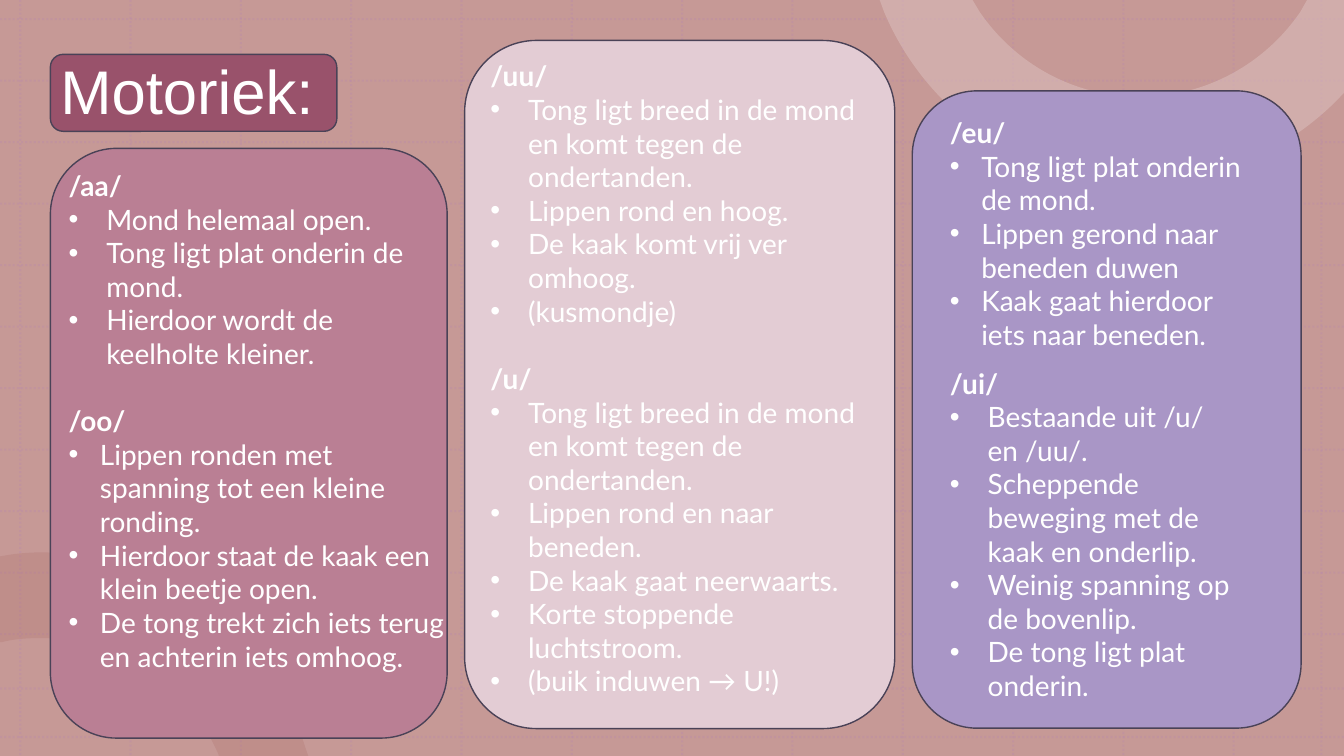
from lxml import etree
from pptx import Presentation
from pptx.dml.color import RGBColor
from pptx.enum import dml, shapes, text
from pptx.oxml.ns import qn
from pptx.util import Cm, Pt

# Content
TITLE = "Motoriek:"
WIDE, NARROW = 0.95, 0.79  # bullet indents in cm
AA = ("/aa/", WIDE, [
    "Mond helemaal open.",
    "Tong ligt plat onderin de mond.",
    "Hierdoor wordt de keelholte kleiner."])
OO = ("/oo/", NARROW, [
    "Lippen ronden met spanning tot een kleine ronding.",
    "Hierdoor staat de kaak een klein beetje open.",
    "De tong trekt zich iets terug en achterin iets omhoog."])
UU = ("/uu/", WIDE, [
    "Tong ligt breed in de mond en komt tegen de ondertanden.",
    "Lippen rond en hoog.",
    "De kaak komt vrij ver omhoog.",
    "(kusmondje)"])
U = ("/u/", WIDE, [
    "Tong ligt breed in de mond en komt tegen de ondertanden.",
    "Lippen rond en naar beneden.",
    "De kaak gaat neerwaarts.",
    "Korte stoppende luchtstroom.",
    "(buik induwen → U!)"])
EU = ("/eu/", NARROW, [
    "Tong ligt plat onderin de mond.",
    "Lippen gerond naar beneden duwen",
    "Kaak gaat hierdoor iets naar beneden."])
UI = ("/ui/", WIDE, [
    "Bestaande uit /u/ en /uu/.",
    "Scheppende beweging met de kaak en onderlip.",
    "Weinig spanning op de bovenlip.",
    "De tong ligt plat onderin."])

THEME = {
    "background": "C69996", "grid": "AF7FBA", "outline": "4A4257", "ink": "FFFFFF",
    "title": "99526B", "left": "BA7F94", "middle": "E3CCD4", "right": "A996C6",
    "low_arc": "A7625E", "high_arc": "DDC2C0",
    "title_font": "Arial", "body_font": "Lato",
    "title_size": 44, "body_size": 20, "section_gap": 24,
}

# Places in cm: left, top, width, height
WIDTH, HEIGHT = 33.87, 19.05
TITLE_CARD, TITLE_BOX = (1.27, 1.37, 7.22, 1.94), (1.27, 1.02, 7.7, 2.72)
CARDS = [  # colour, card, [(text box, sections)]
    ("left", (1.27, 3.74, 10, 14.86), [((1.48, 4.12, 10, 14.78), [AA, OO])]),
    ("middle", (11.71, 1.02, 10.84, 17.34), [((12.11, 1.36, 10.44, 16.51), [UU, U])]),
    ("right", (22.99, 2.29, 9.8, 16.06), [((23.69, 2.79, 8.26, 6.25), [EU]),
                                          ((23.69, 9.1, 8.26, 8.81), [UI])]),
]
GRID_X = [0.51 + 2.78 * i for i in range(12)] + [33.3]
GRID_Y = [0.48 + 1.55 * i for i in range(11)] + [17.35, 18.57]

# Arcs: one point is a straight step, three points are a Bézier curve
ARCS = [
    ("low_arc", 20, (1.02, 13.92), [
        [(4.17, 13.92), (6.83, 16), (7.7, 18.85)], [(7.77, 19.05)], [(5.51, 19.05)],
        [(5.51, 19.02)],
        [(4.78, 17.3), (3.05, 16.08), (1.02, 16.08)],
        [(0.69, 16.08), (0.36, 16.1), (0.05, 16.18)],
        [(0, 16.18)], [(0, 14.02)], [(0.3, 13.97)],
        [(0.53, 13.94), (0.79, 13.92), (1.02, 13.92)]]),
    ("high_arc", 50, (22.17, 0), [
        [(24.51, 0)], [(24.69, 0.3)],
        [(25.58, 1.6), (27.05, 2.44), (28.73, 2.44)],
        [(30.4, 2.44), (31.88, 1.6), (32.77, 0.3)],
        [(32.94, 0)], [(33.87, 0)], [(33.87, 2.34)], [(33.68, 2.54)],
        [(32.41, 3.81), (30.66, 4.6), (28.73, 4.6)],
        [(25.83, 4.6), (23.34, 2.82), (22.28, 0.3)]]),
]


def color(name):
    return RGBColor.from_string(THEME[name])


def set_alpha(properties, percent):
    for node in properties.iter(qn("a:srgbClr")):
        etree.SubElement(node, qn("a:alpha")).set("val", str(percent * 1000))


def paint(shape, fill, outline=None):
    shape.shadow.inherit = False
    shape.fill.solid()
    shape.fill.fore_color.rgb = color(fill)
    if outline:
        shape.line.color.rgb = color(outline)
        shape.line.width = Pt(1)
    else:
        shape.line.fill.background()


def add_block(slide, kind, place, fill, outline=None):
    shape = slide.shapes.add_shape(kind, *map(Cm, place))
    paint(shape, fill, outline)


def add_grid_line(slide, *ends):
    line = slide.shapes.add_connector(shapes.MSO_CONNECTOR.STRAIGHT, *map(Cm, ends))
    line.line.color.rgb = color("grid")
    line.line.width = Pt(1.5)
    line.line.dash_style = dml.MSO_LINE.ROUND_DOT
    properties = line._element.spPr
    set_alpha(properties, 20)
    etree.SubElement(properties, qn("a:effectLst"))


def bend(shape, segments):
    """Join each three-point segment of the outline into one curve."""
    steps = iter(list(shape._element.iter(qn("a:lnTo"))))
    for segment in segments:
        nodes = [next(steps) for _ in segment]
        if len(segment) == 3:
            curve = etree.Element(qn("a:cubicBezTo"))
            nodes[0].addprevious(curve)
            for node in nodes:
                curve.append(node[0])
                node.getparent().remove(node)


def add_arc(slide, fill, alpha, start, segments):
    builder = slide.shapes.build_freeform(*map(Cm, start))
    points = [(Cm(x), Cm(y)) for segment in segments for x, y in segment]
    builder.add_line_segments(points, close=True)
    shape = builder.convert_to_shape()
    bend(shape, segments)
    paint(shape, fill)
    set_alpha(shape._element.spPr, alpha)


def add_frame(slide, place):
    frame = slide.shapes.add_textbox(*map(Cm, place)).text_frame
    frame.word_wrap = True
    return frame


def add_run(paragraph, words, kind, bold=False):
    run = paragraph.add_run()
    run.text = words
    run.font.name = THEME[kind + "_font"]
    run.font.size = Pt(THEME[kind + "_size"])
    run.font.bold = bold
    run.font.color.rgb = color("ink")


def set_bullet(paragraph, indent):
    properties = paragraph._p.get_or_add_pPr()
    properties.set("marL", str(Cm(indent)))
    properties.set("indent", str(-Cm(indent)))
    etree.SubElement(properties, qn("a:buFont")).set("typeface", "Arial")
    etree.SubElement(properties, qn("a:buChar")).set("char", "•")


def add_sections(slide, place, sections):
    frame = add_frame(slide, place)
    for number, (heading, indent, items) in enumerate(sections):
        paragraph = frame.add_paragraph() if number else frame.paragraphs[0]
        if number:
            paragraph.space_before = Pt(THEME["section_gap"])
        add_run(paragraph, heading, "body", bold=True)
        for item in items:
            paragraph = frame.add_paragraph()
            set_bullet(paragraph, indent)
            add_run(paragraph, item, "body")


def main():
    presentation = Presentation()
    presentation.slide_width, presentation.slide_height = Cm(WIDTH), Cm(HEIGHT)
    slide = presentation.slides.add_slide(presentation.slide_layouts[6])

    # Backdrop
    add_block(slide, shapes.MSO_SHAPE.RECTANGLE, (0, 0, WIDTH, HEIGHT), "background")
    for x in GRID_X:
        add_grid_line(slide, x, 0, x, HEIGHT)
    for y in GRID_Y:
        add_grid_line(slide, 0, y, WIDTH, y)
    for arc in ARCS:
        add_arc(slide, *arc)

    # Title
    rounded = shapes.MSO_SHAPE.ROUNDED_RECTANGLE
    add_block(slide, rounded, TITLE_CARD, "title", "outline")
    frame = add_frame(slide, TITLE_BOX)
    frame.vertical_anchor = text.MSO_ANCHOR.MIDDLE
    frame.paragraphs[0].line_spacing = 0.9
    add_run(frame.paragraphs[0], TITLE, "title")

    # Sound cards
    for fill, card, boxes in CARDS:
        add_block(slide, rounded, card, fill, "outline")
        for place, sections in boxes:
            add_sections(slide, place, sections)

    presentation.save("out.pptx")


if __name__ == "__main__":
    main()
